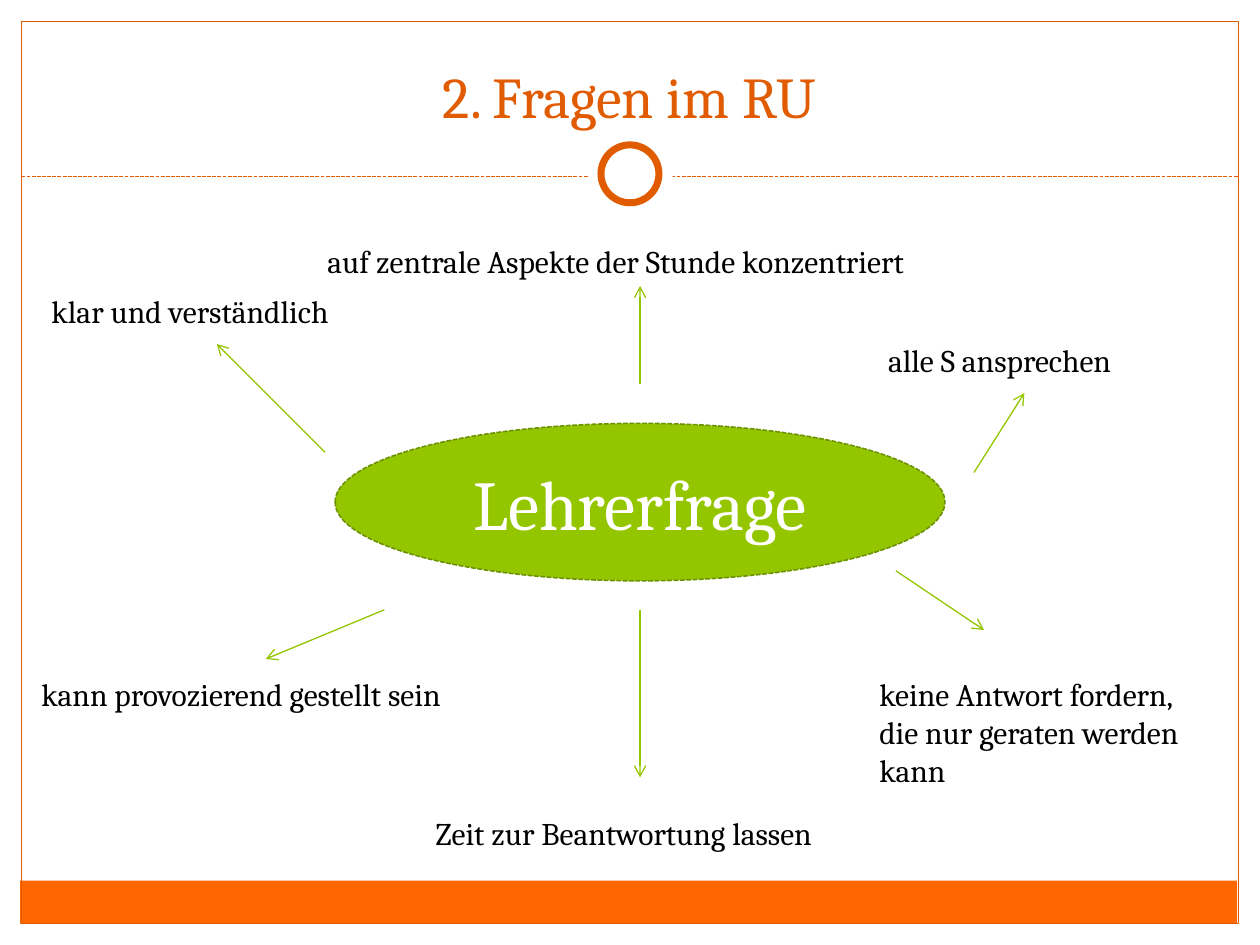
from pptx import Presentation
from pptx.dml.color import RGBColor
from pptx.enum.dml import MSO_LINE
from pptx.enum.shapes import MSO_CONNECTOR, MSO_SHAPE
from pptx.enum.text import MSO_ANCHOR, MSO_AUTO_SIZE, PP_ALIGN
from pptx.oxml.ns import qn
from pptx.util import Inches, Pt
from lxml.etree import SubElement

FONT = "Cambria"
ORANGE = RGBColor(0xFF, 0x67, 0x00)
RUST = RGBColor(0xE1, 0x5B, 0x00)
GREEN = RGBColor(0x94, 0xC6, 0x00)
OLIVE = RGBColor(0x6D, 0x92, 0x00)
WHITE = RGBColor(0xFF, 0xFF, 0xFF)
BLACK = RGBColor(0, 0, 0)

# Label box (left, top, width, height), its lines, and its arrow (x1, y1, x2, y2)
ASPECTS = [
    ((0.31, 2.27, 2.52, 0.4), ["klar und verständlich"],
     (2.58, 3.59, 1.72, 2.73)),
    ((2.5, 1.87, 5.21, 0.4), ["auf zentrale Aspekte der Stunde konzentriert"],
     (5.08, 3.05, 5.08, 2.27)),
    ((6.95, 2.66, 2.22, 0.4), ["alle S ansprechen"],
     (7.73, 3.75, 8.13, 3.12)),
    ((6.88, 5.31, 2.81, 1.01),
     ["keine Antwort fordern,", "die nur geraten werden kann"],
     (7.11, 4.53, 7.81, 5)),
    ((3.36, 6.41, 3.47, 0.4), ["Zeit zur Beantwortung lassen"],
     (5.08, 4.84, 5.08, 6.17)),
    ((0.23, 5.31, 3.68, 0.4), ["kann provozierend gestellt sein"],
     (3.05, 4.84, 2.11, 5.23)),
]


def inches(values):
    return [Inches(v) for v in values]


def style(par, size, color, align=PP_ALIGN.LEFT):
    par.alignment = align
    par.font.name = FONT
    par.font.size = Pt(size)
    par.font.color.rgb = color


def add_shape(slide, kind, box, fill=None, line=None, width=0.75):
    shape = slide.shapes.add_shape(kind, *inches(box))
    shape.shadow.inherit = False
    if fill is None:
        shape.fill.background()
    else:
        shape.fill.solid()
        shape.fill.fore_color.rgb = fill
    if line is None:
        shape.line.fill.background()
    else:
        shape.line.color.rgb = line
        shape.line.width = Pt(width)
    return shape


def add_line(slide, ends, color):
    line = slide.shapes.add_connector(MSO_CONNECTOR.STRAIGHT, *inches(ends))
    line.line.color.rgb = color
    line.line.width = Pt(0.75)
    SubElement(line._element.spPr, qn("a:effectLst"))
    return line


def add_arrow(slide, ends):
    arrow = add_line(slide, ends, GREEN)
    SubElement(arrow.line._get_or_add_ln(), qn("a:tailEnd"), type="arrow")


def add_label(slide, box, lines):
    frame = slide.shapes.add_textbox(*inches(box)).text_frame
    frame.word_wrap = len(lines) > 1
    frame.auto_size = MSO_AUTO_SIZE.SHAPE_TO_FIT_TEXT
    frame.text = "\n".join(lines)
    for par in frame.paragraphs:
        style(par, 18, BLACK)


def add_frame(slide):
    """Draw the border, the footer bar and the divider with its ring."""
    add_shape(slide, MSO_SHAPE.RECTANGLE, (0.16, 6.99, 9.66, 0.34), ORANGE)
    add_shape(slide, MSO_SHAPE.RECTANGLE, (0.17, 0.17, 9.66, 7.16), line=RUST)
    rule = add_line(slide, (0.17, 1.4, 9.83, 1.4), RUST)
    rule.line.dash_style = MSO_LINE.SQUARE_DOT
    add_shape(slide, MSO_SHAPE.OVAL, (4.67, 1.05, 0.67, 0.67), WHITE)
    add_shape(slide, MSO_SHAPE.OVAL, (4.77, 1.15, 0.46, 0.46), WHITE, RUST, 4)


def set_title(slide, text):
    title = slide.shapes.title
    title.left, title.top, title.width, title.height = inches(
        (0.33, 0.25, 9.33, 0.83))
    frame = title.text_frame
    frame.text = text
    frame.vertical_anchor = MSO_ANCHOR.BOTTOM
    style(frame.paragraphs[0], 33, RUST, PP_ALIGN.CENTER)


def add_hub(slide, text):
    hub = add_shape(slide, MSO_SHAPE.OVAL, (2.66, 3.36, 4.84, 1.25),
                    GREEN, OLIVE, 0.9)
    hub.line.dash_style = MSO_LINE.SQUARE_DOT
    frame = hub.text_frame
    frame.text = text
    frame.vertical_anchor = MSO_ANCHOR.MIDDLE
    style(frame.paragraphs[0], 40, WHITE, PP_ALIGN.CENTER)


def main():
    deck = Presentation()
    deck.slide_width, deck.slide_height = Inches(10), Inches(7.5)
    slide = deck.slides.add_slide(deck.slide_layouts[5])
    add_frame(slide)
    set_title(slide, "2. Fragen im RU")
    add_hub(slide, "Lehrerfrage")
    for box, lines, ends in ASPECTS:
        add_arrow(slide, ends)
        add_label(slide, box, lines)
    deck.save("out.pptx")


if __name__ == "__main__":
    main()
